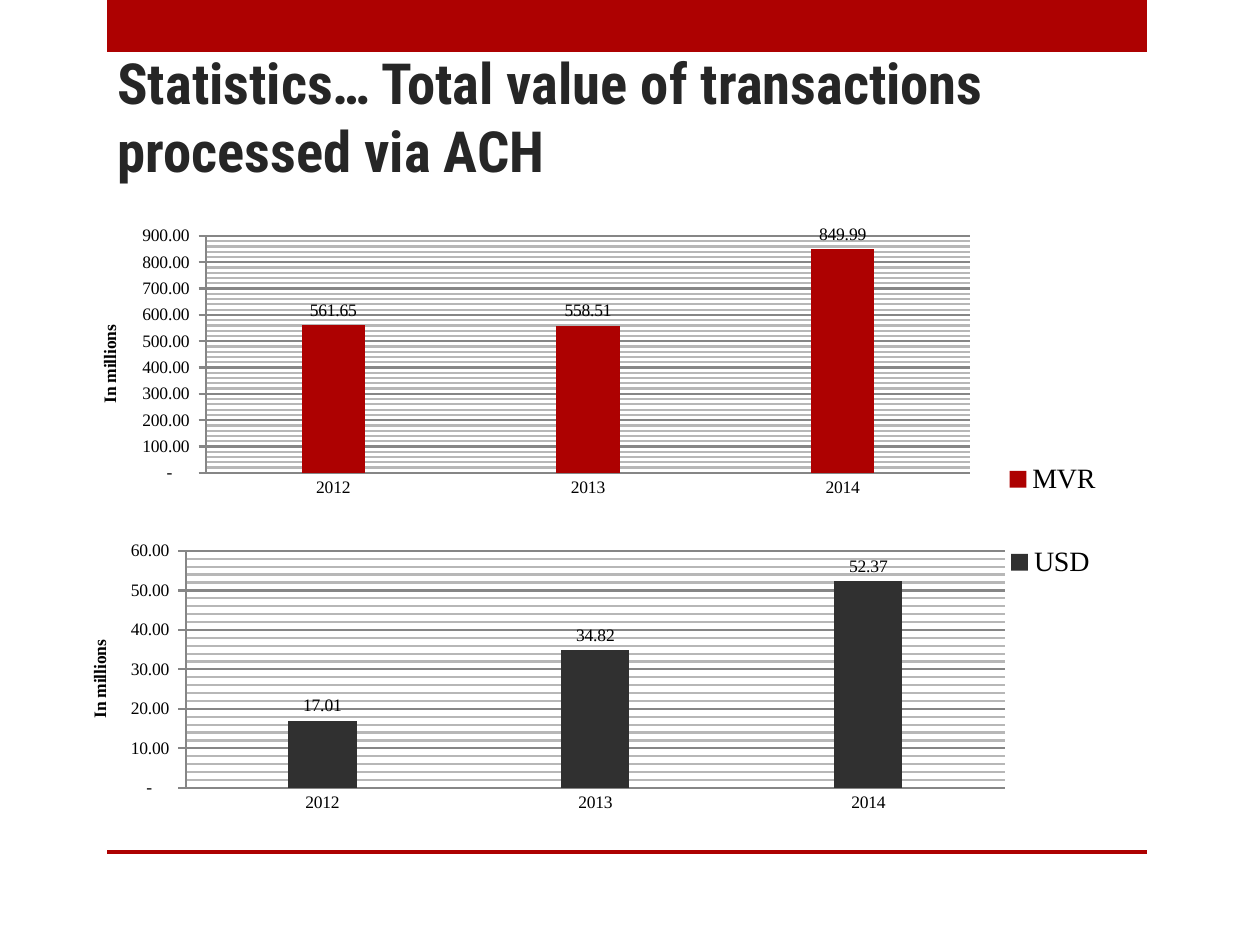
import copy
import dataclasses

import lxml.etree
import pptx
import pptx.chart.data
import pptx.dml.color
import pptx.enum.chart
import pptx.enum.shapes
import pptx.enum.text
import pptx.oxml.ns
import pptx.util

PX = 914400 / 126


@dataclasses.dataclass(frozen=True)
class Theme:
    """Colours, fonts and type sizes."""
    red: str = "AD0101"
    dark: str = "303030"
    ink: str = "262626"
    black: str = "000000"
    axis: str = "868686"
    minor: str = "B7B7B7"
    head: str = "Roboto Condensed"
    body: str = "Times New Roman"
    big: float = 32.4
    mid: float = 16
    small: float = 10
    line: float = 1.25


THEME = Theme()


def emu(px):
    """Turn pixels into EMU."""
    return pptx.util.Emu(round(px * PX))


def rgb(code):
    """Turn a hex code into a colour."""
    return pptx.dml.color.RGBColor.from_string(code)


def style(font, name, size, color, bold=False):
    """Set the face, size, colour and weight of a font."""
    font.name = name
    font.size = pptx.util.Pt(size)
    font.bold = bold
    font.color.rgb = rgb(color)


def add_bar(slide, *box):
    """Add a plain red band."""
    kind = pptx.enum.shapes.MSO_SHAPE.RECTANGLE
    bar = slide.shapes.add_shape(kind, *map(emu, box))
    bar.shadow.inherit = False
    bar.fill.solid()
    bar.fill.fore_color.rgb = rgb(THEME.red)
    bar.line.fill.background()


def add_title(slide, text, *box):
    """Add the slide heading."""
    frame = slide.shapes.add_textbox(*map(emu, box)).text_frame
    frame.word_wrap = True
    frame.vertical_anchor = pptx.enum.text.MSO_ANCHOR.MIDDLE
    run = frame.paragraphs[0].add_run()
    run.text = text
    style(run.font, THEME.head, THEME.big, THEME.ink, True)


def place(node, index, whole, part, inner=False):
    """Fix a chart part at a pixel box within the whole chart."""
    tag = pptx.oxml.ns.qn
    for old in node.findall(tag("c:layout")):
        node.remove(old)
    layout = lxml.etree.Element(tag("c:layout"))
    node.insert(index, layout)
    manual = lxml.etree.SubElement(layout, tag("c:manualLayout"))
    left, top, width, height = whole
    pairs = [("layoutTarget", "inner")] if inner else []
    pairs += [("xMode", "edge"), ("yMode", "edge"),
              ("x", round((part[0] - left) / width, 4)),
              ("y", round((part[1] - top) / height, 4))]
    if len(part) > 2:
        pairs += [("w", round(part[2] / width, 4)),
                  ("h", round(part[3] / height, 4))]
    for key, val in pairs:
        lxml.etree.SubElement(manual, tag("c:" + key)).set("val", str(val))


def rule(line, color):
    """Colour a chart line."""
    line.color.rgb = rgb(color)
    line.width = pptx.util.Pt(THEME.line)


def set_grid(chart):
    """Draw light minor and darker major gridlines."""
    tag = pptx.oxml.ns.qn
    val = chart.value_axis
    val.has_major_gridlines = val.has_minor_gridlines = True
    line = val.major_gridlines.format.line
    rule(line, THEME.minor)
    look = chart.element.find(f".//{tag('c:majorGridlines')}/{tag('c:spPr')}")
    minor = chart.element.find(".//" + tag("c:minorGridlines"))
    minor.append(copy.deepcopy(look))
    rule(line, THEME.axis)


def set_axes(chart, top, step, box):
    """Format both axes and the axis title."""
    mark = pptx.enum.chart.XL_TICK_MARK
    cat, val = chart.category_axis, chart.value_axis
    cat.major_tick_mark = mark.NONE
    val.major_tick_mark = mark.CROSS
    for axis in (cat, val):
        axis.minor_tick_mark = mark.NONE
        rule(axis.format.line, THEME.axis)
    val.minimum_scale, val.maximum_scale = 0, top
    val.major_unit, val.minor_unit = step, step / 5
    val.tick_labels.number_format = (
        '_(* #,##0.00_);_(* \\(#,##0.00\\);_(* "-"??_);_(@_)')
    val.tick_labels.number_format_is_linked = False
    title = val.axis_title
    run = title.text_frame.paragraphs[0].add_run()
    run.text = "In millions"
    style(run.font, THEME.body, THEME.small, THEME.black, True)
    node = title.element if hasattr(title, "element") else title._element
    body = node.find(".//" + pptx.oxml.ns.qn("a:bodyPr"))
    body.set("rot", "-5400000")
    body.set("vert", "horz")
    place(node, 1, box, (box[0] + 32, box[1] + 102))


def add_columns(slide, name, vals, color, top, step, box, plot, key):
    """Add a column chart of one currency."""
    data = pptx.chart.data.CategoryChartData()
    data.categories = ["2012", "2013", "2014"]
    data.add_series(name, vals)
    kind = pptx.enum.chart.XL_CHART_TYPE.COLUMN_CLUSTERED
    chart = slide.shapes.add_chart(kind, *map(emu, box), data).chart
    chart.has_title = False
    style(chart.font, THEME.body, THEME.small, THEME.black)
    set_axes(chart, top, step, box)
    set_grid(chart)
    bars = chart.plots[0]
    bars.gap_width = 300
    bars.vary_by_categories = False
    bars.has_data_labels = True
    labels = bars.data_labels
    labels.show_value = True
    labels.number_format = "0.00"
    labels.number_format_is_linked = False
    labels.position = pptx.enum.chart.XL_LABEL_POSITION.OUTSIDE_END
    fill = bars.series[0].format.fill
    fill.solid()
    fill.fore_color.rgb = rgb(color)
    chart.has_legend = True
    legend = chart.legend
    legend.position = pptx.enum.chart.XL_LEGEND_POSITION.RIGHT
    legend.include_in_layout = False
    style(legend.font, THEME.body, THEME.mid, THEME.black)
    tag = pptx.oxml.ns.qn
    root = chart.element
    place(root.find(".//" + tag("c:plotArea")), 0, box, plot, True)
    node = root.find(".//" + tag("c:legend"))
    first = int(node.find(tag("c:legendPos")) is not None)
    place(node, first, box, key)


def main():
    """Build and save the slide."""
    deck = pptx.Presentation()
    deck.slide_width, deck.slide_height = emu(1260), emu(945)
    slide = deck.slides.add_slide(deck.slide_layouts[6])
    add_bar(slide, 107, 0, 1040, 52)
    add_bar(slide, 107, 850, 1040, 4)
    add_title(slide, "Statistics… Total value of transactions processed via ACH",
              105, 53, 935, 126)
    add_columns(slide, "USD", (17.01, 34.82, 52.37), THEME.dark, 60, 10,
                (53, 535, 1081, 282), (186, 551, 819, 237), (1002, 541))
    add_columns(slide, "MVR ", (561.65, 558.51, 849.99), THEME.red, 900, 100,
                (63, 220, 1050, 282), (206, 236, 764, 237), (1002, 465))
    deck.save("out.pptx")


if __name__ == "__main__":
    main()
